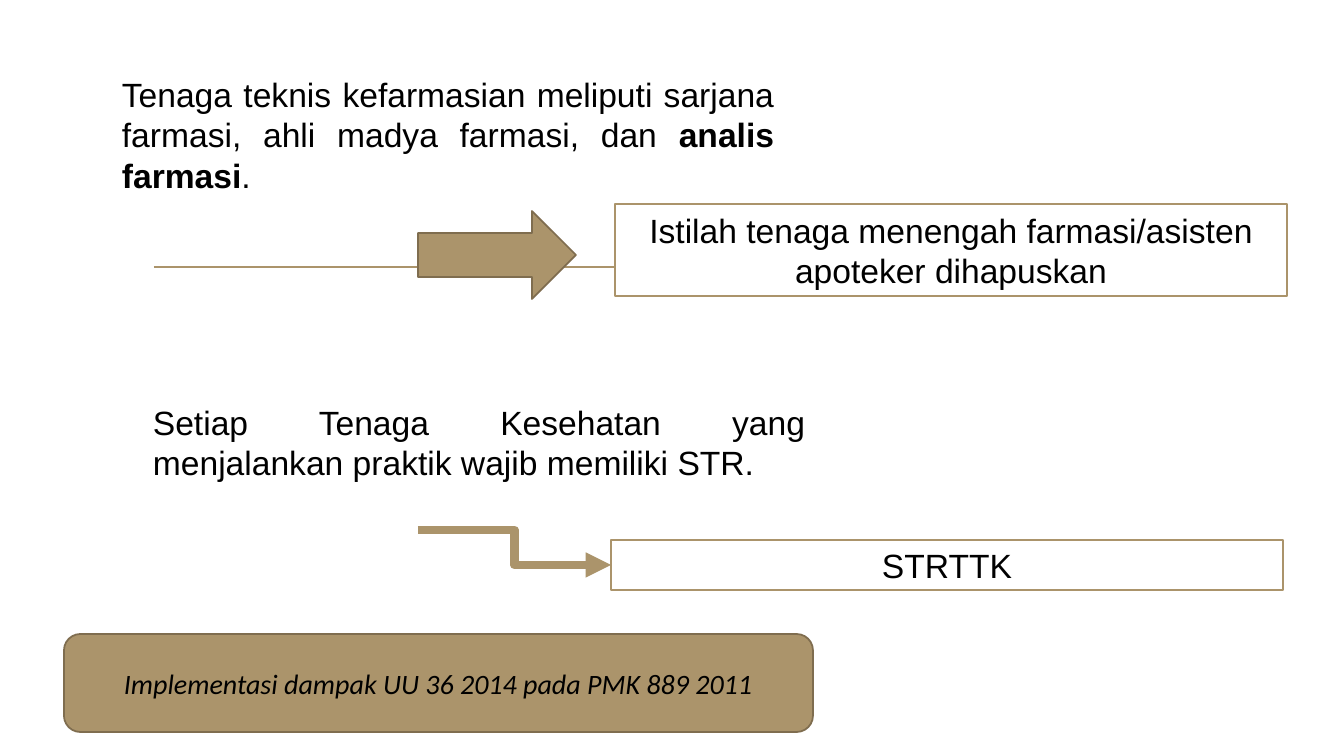
from lxml import etree
from pptx import Presentation
from pptx import util as u
from pptx.dml.color import RGBColor
from pptx.enum import shapes, text
from pptx.oxml.ns import qn

COLORS = {"sand": "AB946B", "edge": "7F6D4F", "white": "FFFFFF", "ink": "000000"}
PX = 914400 / 100.8  # EMU in one px
THIN, THICK = 1.25, 6

BODY = {"name": "Arial", "size": u.Pt(24)}
CAPTION = {"name": "Calibri", "size": u.Pt(20), "italic": True}

# Content: (left, top, width, height) in px, then runs of (wording, bold)
STATEMENTS = [
    ((112, 69, 672, 132), [
        ("Tenaga teknis kefarmasian meliputi sarjana farmasi, ahli madya farmasi, dan ", False),
        ("analis farmasi", True),
        (".", False),
    ]),
    ((143, 397, 672, 92), [
        ("Setiap Tenaga Kesehatan yang menjalankan praktik wajib memiliki STR.", False),
    ]),
]
# Content: preset, box, fill, line, wording, font
PANELS = [
    ("RIGHT_ARROW", (418, 211, 158, 88), "sand", "edge", "", BODY),
    ("RECTANGLE", (615, 204, 672, 92), "white", "sand",
     "Istilah tenaga menengah farmasi/asisten apoteker dihapuskan", BODY),
    ("RECTANGLE", (611, 540, 672, 50), "white", "sand", "STRTTK", BODY),
    ("ROUNDED_RECTANGLE", (64, 634, 749, 98), "sand", "edge",
     "Implementasi dampak UU 36 2014 pada PMK 889 2011", CAPTION),
]
RULE = (154, 267, 1190, 267)
ELBOW = (418, 530, 611, 565)


def emu(lengths):
    return [round(n * PX) for n in lengths]


def rgb(name):
    return RGBColor.from_string(COLORS[name])


def write(frame, runs, align, anchor, font):
    frame.word_wrap = True
    frame.vertical_anchor = anchor
    paragraph = frame.paragraphs[0]
    paragraph.alignment = align
    for wording, bold in runs:
        run = paragraph.add_run()
        run.text = wording
        run.font.color.rgb = rgb("ink")
        for key, value in {**font, "bold": bold}.items():
            setattr(run.font, key, value)


def connect(slide, kind, ends, weight):
    connector = slide.shapes.add_connector(kind, *emu(ends))
    connector.line.color.rgb = rgb("sand")
    connector.line.width = u.Pt(weight)
    etree.SubElement(connector._element.spPr, qn("a:effectLst"))
    return connector


def main():
    deck = Presentation()
    deck.slide_width, deck.slide_height = emu((1344, 756))
    slide = deck.slides.add_slide(deck.slide_layouts[6])

    # Horizontal rule behind everything
    connect(slide, shapes.MSO_CONNECTOR.STRAIGHT, RULE, THIN)

    # Statements of the law
    for box, runs in STATEMENTS:
        statement = slide.shapes.add_textbox(*emu(box))
        write(statement.text_frame, runs, text.PP_ALIGN.JUSTIFY, text.MSO_ANCHOR.TOP, BODY)

    # Arrow, consequences and caption
    for preset, box, fill, edge, wording, font in PANELS:
        panel = slide.shapes.add_shape(getattr(shapes.MSO_SHAPE, preset), *emu(box))
        panel.shadow.inherit = False
        panel.fill.solid()
        panel.fill.fore_color.rgb = rgb(fill)
        panel.line.color.rgb = rgb(edge)
        panel.line.width = u.Pt(THIN)
        if wording:
            write(panel.text_frame, [(wording, False)], text.PP_ALIGN.CENTER,
                  text.MSO_ANCHOR.MIDDLE, font)

    # Elbow arrow to the second consequence
    elbow = connect(slide, shapes.MSO_CONNECTOR.ELBOW, ELBOW, THICK)
    etree.SubElement(elbow.line._get_or_add_ln(), qn("a:tailEnd"), type="triangle")

    deck.save("out.pptx")


if __name__ == "__main__":
    main()
